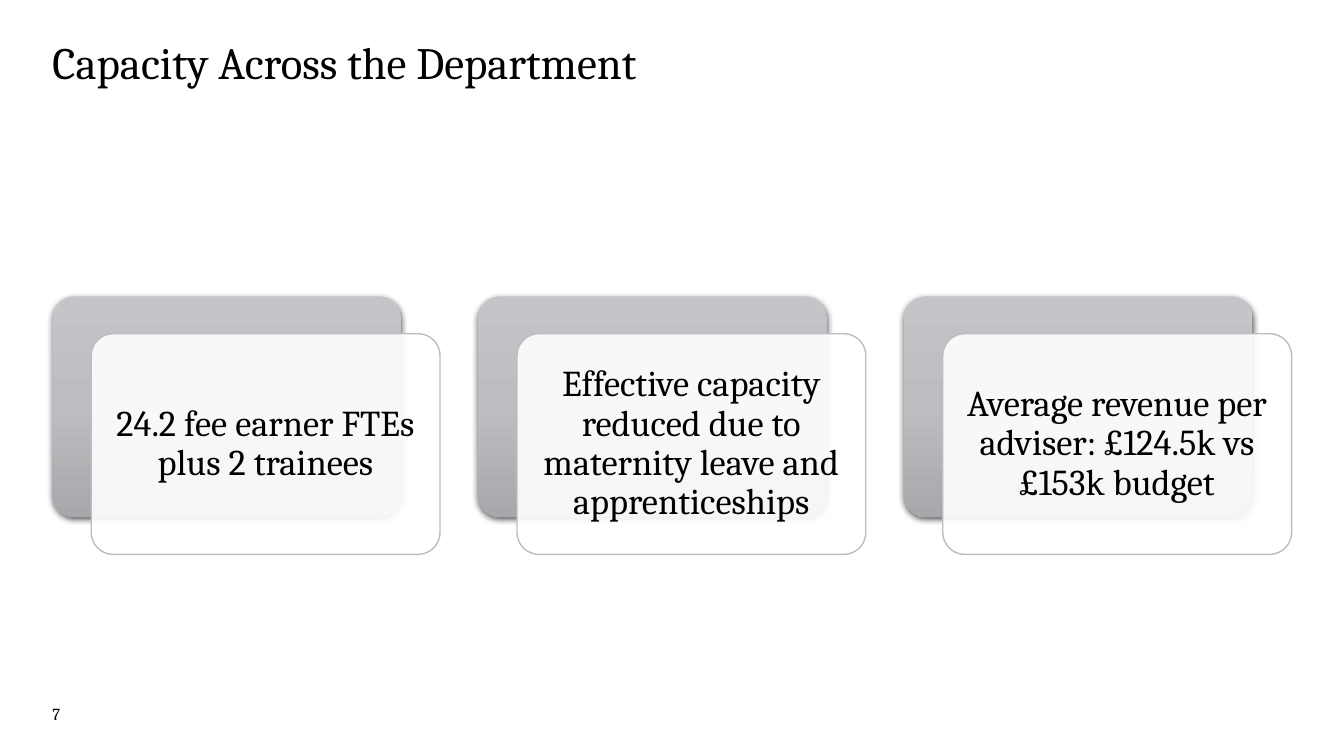
import pptx
import pptx.util
import pptx.oxml
import pptx.oxml.ns
import pptx.dml.color
import pptx.enum.shapes
import pptx.enum.text
from pptx.util import Cm

FONT = "Cambria"
LEFT = 1.32
TOP = 7.47
WIDE = 8.79
HIGH = 5.56
PITCH = 10.73
SHIFT = 0.98
DROP = 0.94
STOPS = [(0, "C5C4C8"), (50, "BDBCC0"), (100, "A8A7AB")]
FACTS = [
    "24.2 fee earner FTEs plus 2 trainees",
    "Effective capacity reduced due to maternity leave and apprenticeships",
    "Average revenue per adviser: £124.5k vs £153k budget",
]


def paint(color, code):
    color.rgb = pptx.dml.color.RGBColor.from_string(code)


def make(tag, **attrs):
    node = pptx.oxml.parse_xml(f"<a:{tag} {pptx.oxml.ns.nsdecls('a')}/>")
    for name, value in attrs.items():
        node.set(name, str(value))
    return node


def tint(code, alpha):
    node = make("srgbClr", val=code)
    node.append(make("alpha", val=alpha * 1000))
    return node


def write(frame, text, size, align, anchor, inset=0):
    frame.word_wrap = True
    frame.auto_size = pptx.enum.text.MSO_AUTO_SIZE.NONE
    frame.vertical_anchor = anchor
    frame.margin_left = frame.margin_right = Cm(inset)
    frame.margin_top = frame.margin_bottom = Cm(inset)
    frame.text = text
    para = frame.paragraphs[0]
    para.alignment = align
    para.font.name = FONT
    para.font.size = pptx.util.Pt(size)
    paint(para.font.color, "000000")
    return para


def panel(slide, left, top):
    kind = pptx.enum.shapes.MSO_SHAPE.ROUNDED_RECTANGLE
    shape = slide.shapes.add_shape(kind, Cm(left), Cm(top), Cm(WIDE), Cm(HIGH))
    shape.adjustments[0] = 0.1
    shape.shadow.inherit = False
    return shape


def shade(shape):
    shape.fill.gradient()
    shape.fill.gradient_angle = 270
    stops = shape._element.spPr.find(".//" + pptx.oxml.ns.qn("a:gsLst"))
    for stop in list(stops):
        stops.remove(stop)
    for place, code in STOPS:
        stop = make("gs", pos=place * 1000)
        stop.append(make("srgbClr", val=code))
        stops.append(stop)


def cast(shape):
    shadow = make("outerShdw", blurRad=pptx.util.Pt(4.5), dist=pptx.util.Pt(1.5),
                  dir=5400000, algn="ctr", rotWithShape=0)
    shadow.append(tint("000000", 63))
    shape._element.spPr.find(pptx.oxml.ns.qn("a:effectLst")).append(shadow)


def card(slide, left, text):
    back = panel(slide, left, TOP)
    shade(back)
    back.line.fill.background()
    cast(back)

    front = panel(slide, left + SHIFT, TOP + DROP)
    front.fill.solid()
    paint(front.fill.fore_color, "FFFFFF")
    fill = front._element.spPr.find(pptx.oxml.ns.qn("a:solidFill"))
    fill.replace(fill[0], tint("FFFFFF", 90))
    paint(front.line.color, "BDBCC0")
    front.line.width = pptx.util.Pt(1)
    para = write(front.text_frame, text, 26, pptx.enum.text.PP_ALIGN.CENTER,
                 pptx.enum.text.MSO_ANCHOR.MIDDLE, 0.28)
    para.line_spacing = 0.9


def title(slide, text):
    head = slide.shapes.title
    head.left, head.top = Cm(LEFT), Cm(1.02)
    head.width, head.height = Cm(31.2), Cm(2.97)
    para = write(head.text_frame, text, 32, pptx.enum.text.PP_ALIGN.LEFT,
                 pptx.enum.text.MSO_ANCHOR.TOP)
    para.line_spacing = 0.9


def number(slide, text):
    box = slide.shapes.add_textbox(Cm(LEFT), Cm(17.73), Cm(1.2), Cm(1.02))
    write(box.text_frame, text, 12, pptx.enum.text.PP_ALIGN.LEFT,
          pptx.enum.text.MSO_ANCHOR.TOP)


def main():
    deck = pptx.Presentation()
    deck.slide_width, deck.slide_height = Cm(33.87), Cm(19.05)
    slide = deck.slides.add_slide(deck.slide_layouts.get_by_name("Title Only"))
    title(slide, "Capacity Across the Department")
    number(slide, "7")
    for index, fact in enumerate(FACTS):
        card(slide, LEFT + index * PITCH, fact)
    deck.save("out.pptx")


if __name__ == "__main__":
    main()
